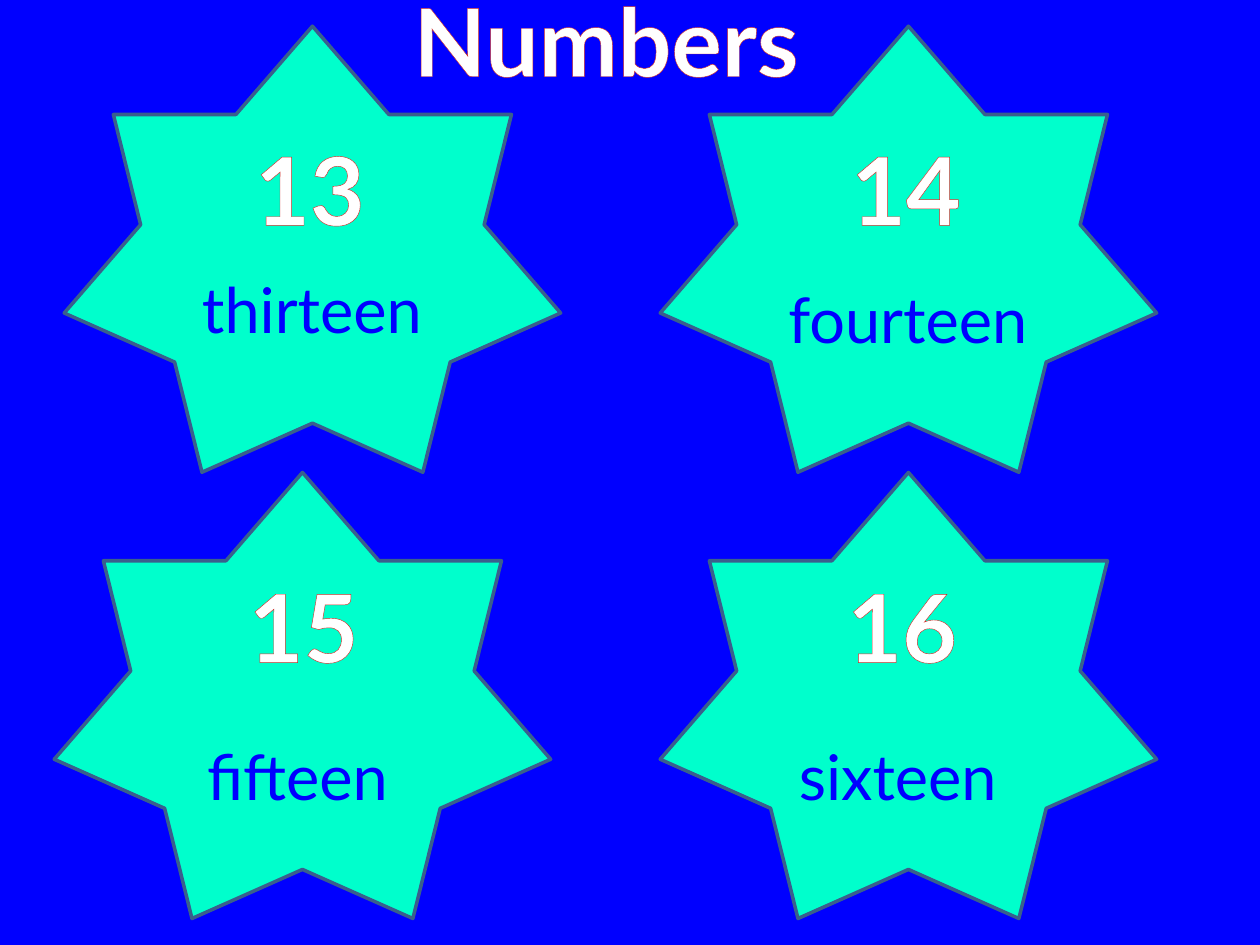
from lxml.etree import fromstring
from pptx import Presentation
from pptx.dml.color import RGBColor
from pptx.enum.shapes import MSO_SHAPE
from pptx.enum.text import MSO_AUTO_SIZE, PP_ALIGN
from pptx.util import Pt

COLORS = {
    "blue": "0000FF",
    "mint": "00FFCC",
    "edge": "3A5F8C",
    "white": "FFFFFF",
    "red": "D02F2A",
}
FONT = "Lato"
STAR_WIDTH, STAR_HEIGHT = 283.68, 254.88
TEXT_OUTLINE = (
    '<a:ln xmlns:a="http://schemas.openxmlformats.org/drawingml/2006/main" w="24511">'
    f'<a:solidFill><a:srgbClr val="{COLORS["red"]}"/></a:solidFill></a:ln>'
)


def add_text(page, text, left, top, width, height, size, color):
    box = page.shapes.add_textbox(Pt(left), Pt(top), Pt(width), Pt(height))
    frame = box.text_frame
    frame.text = text
    frame.word_wrap = True
    frame.auto_size = MSO_AUTO_SIZE.SHAPE_TO_FIT_TEXT
    para = frame.paragraphs[0]
    para.alignment = PP_ALIGN.CENTER
    span = para.runs[0]
    span.font.name = FONT
    span.font.size = Pt(size)
    span.font.color.rgb = RGBColor.from_string(COLORS[color])
    return box


def add_heading(page, text, left, top, width):
    box = add_text(page, text, left, top, width, 72.7, 54, "white")
    box.text_frame.word_wrap = False
    span = box.text_frame.paragraphs[0].runs[0]
    span.font.bold = True
    span.font._element.insert(0, fromstring(TEXT_OUTLINE))


deck = Presentation()
deck.slide_width = Pt(720)
deck.slide_height = Pt(540)
page = deck.slides.add_slide(deck.slide_layouts[6])
page.background.fill.solid()
page.background.fill.fore_color.rgb = RGBColor.from_string(COLORS["blue"])

for left, top in [(36.7, 15), (31, 270), (377.3, 270), (377.3, 15)]:
    star = page.shapes.add_shape(
        MSO_SHAPE.STAR_7_POINT, Pt(left), Pt(top), Pt(STAR_WIDTH), Pt(STAR_HEIGHT)
    )
    star.shadow.inherit = False
    star.fill.solid()
    star.fill.fore_color.rgb = RGBColor.from_string(COLORS["mint"])
    star.line.color.rgb = RGBColor.from_string(COLORS["edge"])
    star.line.width = Pt(2)

add_heading(page, "Numbers", 206.6, -13.7, 279.4)

for numeral, left, top in [
    ("13", 133.9, 71.3),
    ("15", 130.3, 321.1),
    ("16", 472.3, 321.1),
    ("14", 474.5, 71.3),
]:
    add_heading(page, numeral, left, top, 86.4)

for word, left, top, width in [
    ("thirteen", 70.6, 151.2, 215.3),
    ("fourteen", 411.1, 157, 215.3),
    ("fifteen", 70.6, 417.6, 198.7),
    ("sixteen", 399.6, 417.6, 226.8),
]:
    add_text(page, word, left, top, width, 51.1, 36, "blue")

deck.save("out.pptx")
